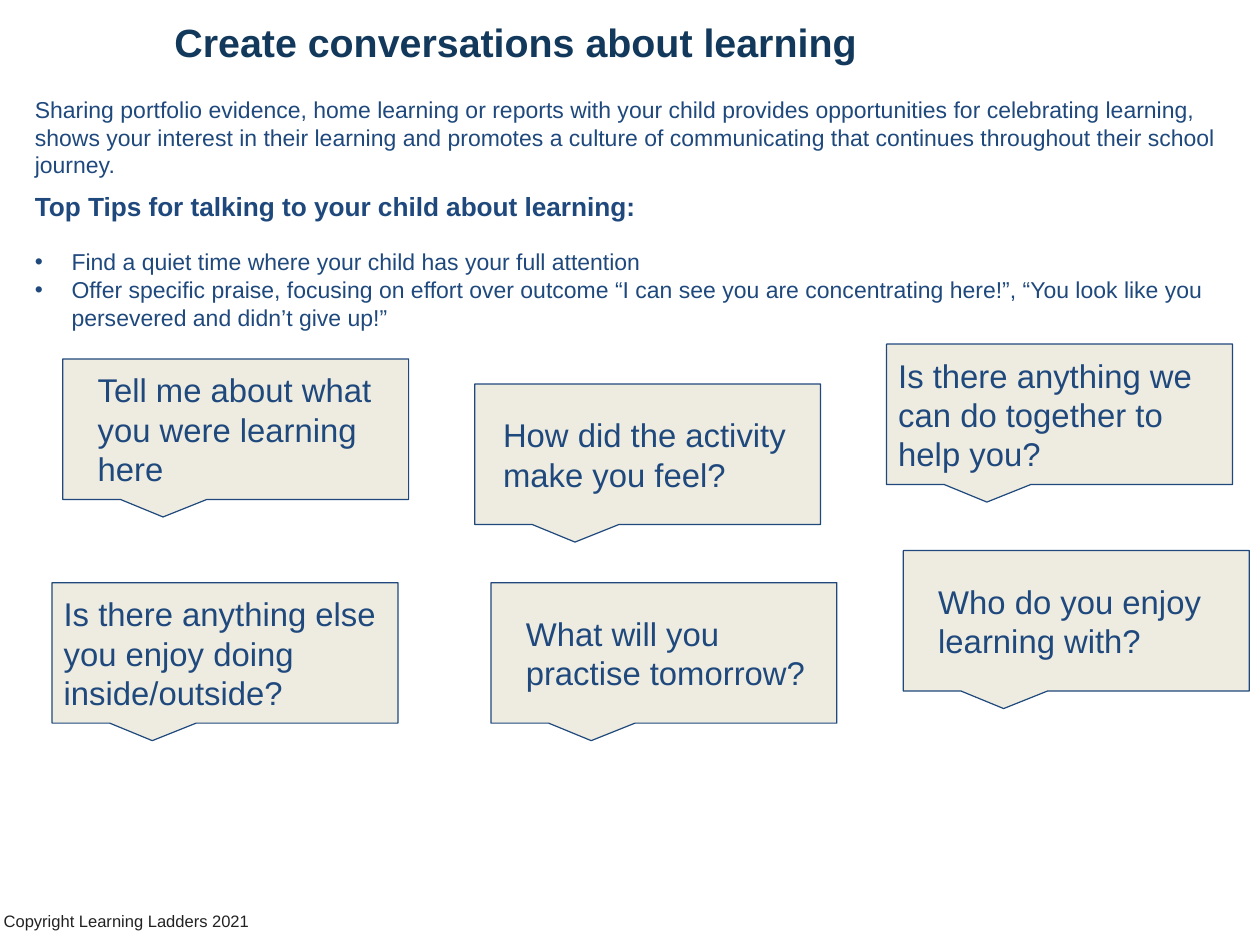
from lxml import etree
from pptx import Presentation
from pptx import util as u
from pptx.dml.color import RGBColor
from pptx.enum import shapes, text
from pptx.oxml.ns import qn

Cm, Pt = u.Cm, u.Pt
THEME = {
    "face": "Arial",
    "navy": RGBColor.from_string("12395B"),
    "blue": RGBColor.from_string("1F497D"),
    "sand": RGBColor.from_string("EEECE1"),
    "grey": RGBColor.from_string("222222"),
    "title": Pt(24), "head": Pt(16), "body": Pt(14),
    "ask": Pt(20), "foot": Pt(10.1),
}


def add_box(left, top, wide, high, pad_x, pad_y):
    """Add a wrapping text box and return its frame."""
    frame = slide.shapes.add_textbox(Cm(left), Cm(top), Cm(wide), Cm(high)).text_frame
    form = {"word_wrap": True, "margin_left": Cm(pad_x), "margin_right": Cm(pad_x),
            "margin_top": Cm(pad_y), "margin_bottom": Cm(pad_y)}
    for key, val in form.items():
        setattr(frame, key, val)
    return frame


def add_text(para, words, size, color="blue", bold=False):
    """Add one styled run to a paragraph."""
    run = para.add_run()
    run.text = words
    form = {"name": THEME["face"], "size": THEME[size], "bold": bold}
    for key, val in form.items():
        setattr(run.font, key, val)
    run.font.color.rgb = THEME[color]


deck = Presentation()
deck.slide_width, deck.slide_height = Cm(27.1), Cm(20.32)
slide = deck.slides.add_slide(deck.slide_layouts[6])

# Copyright line
para = add_box(0.08, 19.41, 7.8, 0.46, 0, 0).paragraphs[0]
para.line_spacing = 1.4
add_text(para, "Copyright Learning Ladders 2021", "foot", "grey")

# Title
para = add_box(-1.8, 0.2, 25.78, 1.88, 0.2, 0.2).paragraphs[0]
para.alignment = text.PP_ALIGN.CENTER
add_text(para, "Create conversations about learning", "title", "navy", True)

# Introduction
para = add_box(0.5, 1.93, 26.01, 2.06, 0.25, 0.13).paragraphs[0]
add_text(para, "Sharing portfolio evidence, home learning or reports with your child "
         "provides opportunities for celebrating learning, shows your interest in their "
         "learning and promotes a culture of communicating that continues throughout "
         "their school journey.", "body")

# Tips: heading and bullets
tips = [
    "Find a quiet time where your child has your full attention",
    "Offer specific praise, focusing on effort over outcome “I can see you are "
    "concentrating here!”, “You look like you persevered and didn’t give up!”",
]
frame = add_box(0.5, 3.96, 26.87, 5.74, 0.25, 0.13)
para = frame.paragraphs[0]
para.space_after = Pt(16)
add_text(para, "Top Tips for talking to your child about learning:", "head", bold=True)
for tip in tips:
    para = frame.add_paragraph()
    props = para._p.get_or_add_pPr()
    props.set("marL", str(Cm(0.79)))
    props.set("indent", str(-Cm(0.79)))
    etree.SubElement(props, qn("a:buFont")).set("typeface", THEME["face"])
    etree.SubElement(props, qn("a:buChar")).set("char", "•")
    add_text(para, tip, "body")

# Speech bubbles: left, top, text offset, text width, question
WIDE, HIGH = 7.44, 3.02
asks = [
    (10.21, 8.26, 0.36, 6.93, "How did the activity make you feel?"),
    (19.07, 7.4, 0, 6.93, "Is there anything we can do together to help you?"),
    (10.56, 12.53, 0.5, 6.93, "What will you practise tomorrow?"),
    (1.12, 12.53, 0, 8.03, "Is there anything else you enjoy doing inside/outside?"),
    (19.43, 11.84, 0.5, 6.93, "Who do you enjoy learning with?"),
    (1.35, 7.72, 0.5, 6.93, "Tell me about what you were learning here"),
]
for left, top, shift, span, ask in asks:
    bubble = slide.shapes.add_shape(shapes.MSO_SHAPE.ROUNDED_RECTANGULAR_CALLOUT,
                                    Cm(left), Cm(top), Cm(WIDE), Cm(HIGH))
    for spot, val in enumerate((-0.21, 0.625, 0)):
        bubble.adjustments[spot] = val
    bubble.shadow.inherit = False
    bubble.fill.solid()
    bubble.fill.fore_color.rgb = THEME["sand"]
    bubble.line.color.rgb = THEME["blue"]
    bubble.line.width = Pt(0.75)

    frame = add_box(left + shift, top, span, HIGH, 0.25, 0)
    frame.vertical_anchor = text.MSO_ANCHOR.MIDDLE
    add_text(frame.paragraphs[0], ask, "ask")

deck.save("out.pptx")
